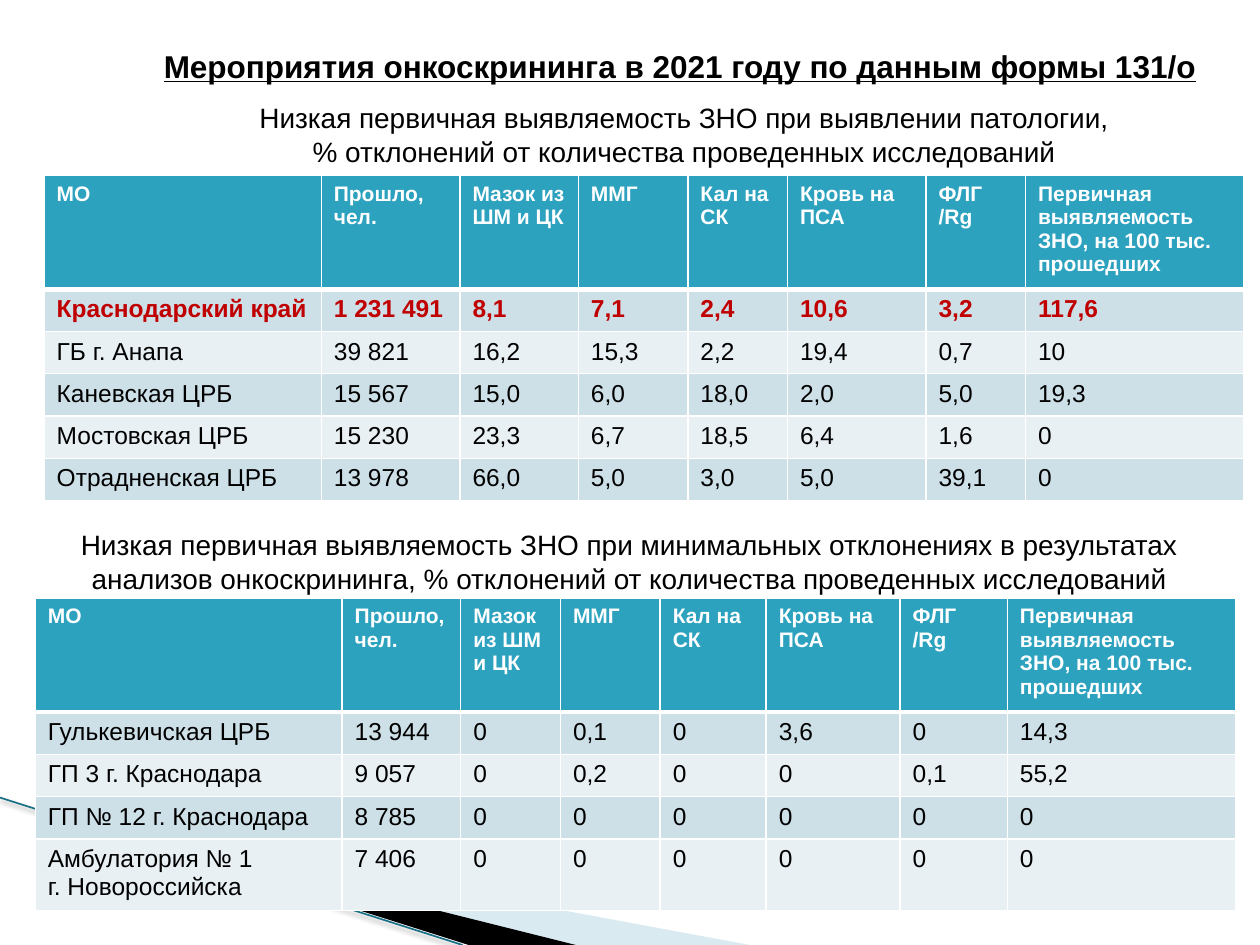
from lxml.etree import SubElement
from pptx import Presentation
from pptx.dml.color import RGBColor
from pptx.enum.text import MSO_ANCHOR, MSO_AUTO_SIZE, PP_ALIGN
from pptx.enum.shapes import MSO_CONNECTOR
from pptx.oxml.ns import qn
from pptx.util import Inches, Pt

COLORS = {
    "text": "000000", "white": "FFFFFF", "accent": "C00000",
    "header": "2DA2BF", "odd": "CDE0E8", "even": "E8F0F4",
    "wedge": "A0CBDC", "edge": "196F85",
}
FORMATS = {
    "title": {"name": "Arial", "size": Pt(18), "bold": True, "underline": True},
    "caption": {"name": "Arial", "size": Pt(16), "bold": False},
    "header": {"name": "Arial", "size": Pt(12), "bold": True},
    "total": {"name": "Arial", "size": Pt(14), "bold": True},
    "body": {"name": "Arial", "size": Pt(14), "bold": False},
}
HEADERS = ("МО|Прошло, чел.|Мазок из ШМ и ЦК|ММГ|Кал на СК|Кровь на ПСА|ФЛГ /Rg|"
           "Первичная выявляемость ЗНО, на 100 тыс. прошедших")
PATHOLOGY_ROWS = [
    "Краснодарский край|1 231 491|8,1|7,1|2,4|10,6|3,2|117,6",
    "ГБ г. Анапа|39 821|16,2|15,3|2,2|19,4|0,7|10",
    "Каневская ЦРБ|15 567|15,0|6,0|18,0|2,0|5,0|19,3",
    "Мостовская ЦРБ|15 230|23,3|6,7|18,5|6,4|1,6|0",
    "Отрадненская ЦРБ|13 978|66,0|5,0|3,0|5,0|39,1|0",
]
MINIMAL_ROWS = [
    "Гулькевичская ЦРБ|13 944|0|0,1|0|3,6|0|14,3",
    "ГП 3 г. Краснодара|9 057|0|0,2|0|0|0,1|55,2",
    "ГП № 12 г. Краснодара|8 785|0|0|0|0|0|0",
    "Амбулатория № 1\vг. Новороссийска|7 406|0|0|0|0|0|0",
]
SLIDE_W, SLIDE_H = Inches(10), Inches(7.5)


def across(percent):
    return round(SLIDE_W * percent / 100)


def down(percent):
    return round(SLIDE_H * percent / 100)


def place(box):
    """Turn a box in percent of the slide into lengths."""
    left, top, width, height = box
    return across(left), down(top), across(width), down(height)


def rgb(color):
    return RGBColor.from_string(COLORS[color])


def style(font, format_name, color):
    for key, value in FORMATS[format_name].items():
        setattr(font, key, value)
    font.color.rgb = rgb(color)


def add_wedge(slide, corners, color, opacity=100):
    start, *rest = [(across(x), down(y)) for x, y in corners]
    builder = slide.shapes.build_freeform(*start, scale=1.0)
    builder.add_line_segments(rest, close=True)
    wedge = builder.convert_to_shape()
    wedge.shadow.inherit = False
    wedge.fill.solid()
    wedge.fill.fore_color.rgb = rgb(color)
    wedge.line.fill.background()
    if opacity < 100:
        fill_color = wedge.fill._xPr.find(qn("a:solidFill"))[0]
        SubElement(fill_color, qn("a:alpha"), val=str(opacity * 1000))


def add_corner_decor(slide, box):
    """Wedges and edge line running from the left side to the bottom."""
    left, top, width, height = box
    bottom = top + height

    def at(x_share, y_share):
        return left + width * x_share / 100, top + height * y_share / 100

    add_wedge(slide, [at(9.24, 14.53), at(100, 100), at(76.64, 100)], "wedge", 40)
    add_wedge(slide, [at(8.91, 13.68), at(76.81, 100), at(62.52, 100)], "text")

    end_x, _ = at(61.7, 100)
    edge = slide.shapes.add_connector(
        MSO_CONNECTOR.STRAIGHT, across(left), down(top), across(end_x), down(bottom))
    edge.line.color.rgb = rgb("edge")
    edge.line.width = Pt(0.95)
    effects = SubElement(edge._element.spPr, qn("a:effectLst"))
    shadow = SubElement(effects, qn("a:outerShdw"), blurRad=str(Pt(3.1)),
                        dist=str(Pt(1.6)), dir="5400000", algn="t", rotWithShape="0")
    shade = SubElement(shadow, qn("a:srgbClr"), val=COLORS["text"])
    SubElement(shade, qn("a:alpha"), val="38000")


def add_title(slide, box, wording):
    frame = slide.shapes.add_textbox(*place(box)).text_frame
    layout = {"word_wrap": True, "vertical_anchor": MSO_ANCHOR.MIDDLE, "margin_left": 0,
              "margin_top": 0, "margin_right": 0, "margin_bottom": 0}
    for key, value in layout.items():
        setattr(frame, key, value)
    frame.text = wording
    style(frame.paragraphs[0].runs[0].font, "title", "text")


def add_caption(slide, box, wording):
    frame = slide.shapes.add_textbox(*place(box)).text_frame
    frame.word_wrap = True
    frame.auto_size = MSO_AUTO_SIZE.SHAPE_TO_FIT_TEXT
    frame.text = wording
    for line in frame.paragraphs:
        line.alignment = PP_ALIGN.CENTER
        style(line.runs[0].font, "caption", "text")


def add_borders(cell, widths):
    properties = cell._tc.get_or_add_tcPr()
    for side, width in widths.items():
        border = SubElement(properties, qn(f"a:ln{side}"), w=str(Pt(width)))
        paint = SubElement(border, qn("a:solidFill"))
        SubElement(paint, qn("a:srgbClr"), val=COLORS["white"])


def add_screening_table(slide, box, rows, column_weights, row_weights, total_row=None):
    """Header row and banded body; the weights divide the box."""
    lines = [line.split("|") for line in [HEADERS, *rows]]
    left, top, width, height = place(box)
    table = slide.shapes.add_table(len(lines), len(column_weights),
                                   left, top, width, height).table
    for column, weight in zip(table.columns, column_weights):
        column.width = round(width * weight / sum(column_weights))
    for row, weight in zip(table.rows, row_weights):
        row.height = round(height * weight / sum(row_weights))

    for r, line in enumerate(lines):
        if r == 0:
            format_name, color, fill = "header", "white", "header"
        else:
            is_total = r == total_row
            format_name, color = ("total", "accent") if is_total else ("body", "text")
            fill = "odd" if r % 2 else "even"
        borders = {"L": 1, "R": 1, "T": 3 if r == 1 else 1, "B": 3 if r == 0 else 1}
        for c, wording in enumerate(line):
            cell = table.cell(r, c)
            cell.text = wording
            for run in cell.text_frame.paragraphs[0].runs:
                style(run.font, format_name, color)
            add_borders(cell, borders)
            cell.fill.solid()
            cell.fill.fore_color.rgb = rgb(fill)


def main():
    deck = Presentation()
    deck.slide_width, deck.slide_height = SLIDE_W, SLIDE_H
    slide = deck.slides.add_slide(deck.slide_layouts[6])

    add_corner_decor(slide, (0, 84.4, 59.5, 15.6))
    add_title(slide, (13, 5.87, 85, 2.13),
              "Мероприятия онкоскрининга в 2021 году по данным формы 131/о")

    # Low detection although deviations are found
    add_caption(slide, (11.4, 10, 85.8, 8.53),
                "Низкая первичная выявляемость ЗНО при выявлении патологии,\n"
                "% отклонений от количества проведенных исследований")
    add_screening_table(slide, (3.5, 18.6, 95.2, 34.27), PATHOLOGY_ROWS,
                        [220, 110, 94, 87, 79, 110, 79, 173],
                        [85, 32, 32, 32, 32, 32], total_row=1)

    # Low detection with minimal deviations
    add_caption(slide, (2.7, 55.2, 94.5, 8.53),
                "Низкая первичная выявляемость ЗНО при минимальных отклонениях в результатах "
                "анализов онкоскрининга, % отклонений от количества проведенных исследований")
    add_screening_table(slide, (2.8, 63.33, 95.3, 32.93), MINIMAL_ROWS,
                        [243, 94, 79, 79, 84, 106, 85, 181],
                        [85, 32, 32, 32, 54])

    deck.save("out.pptx")


if __name__ == "__main__":
    main()
